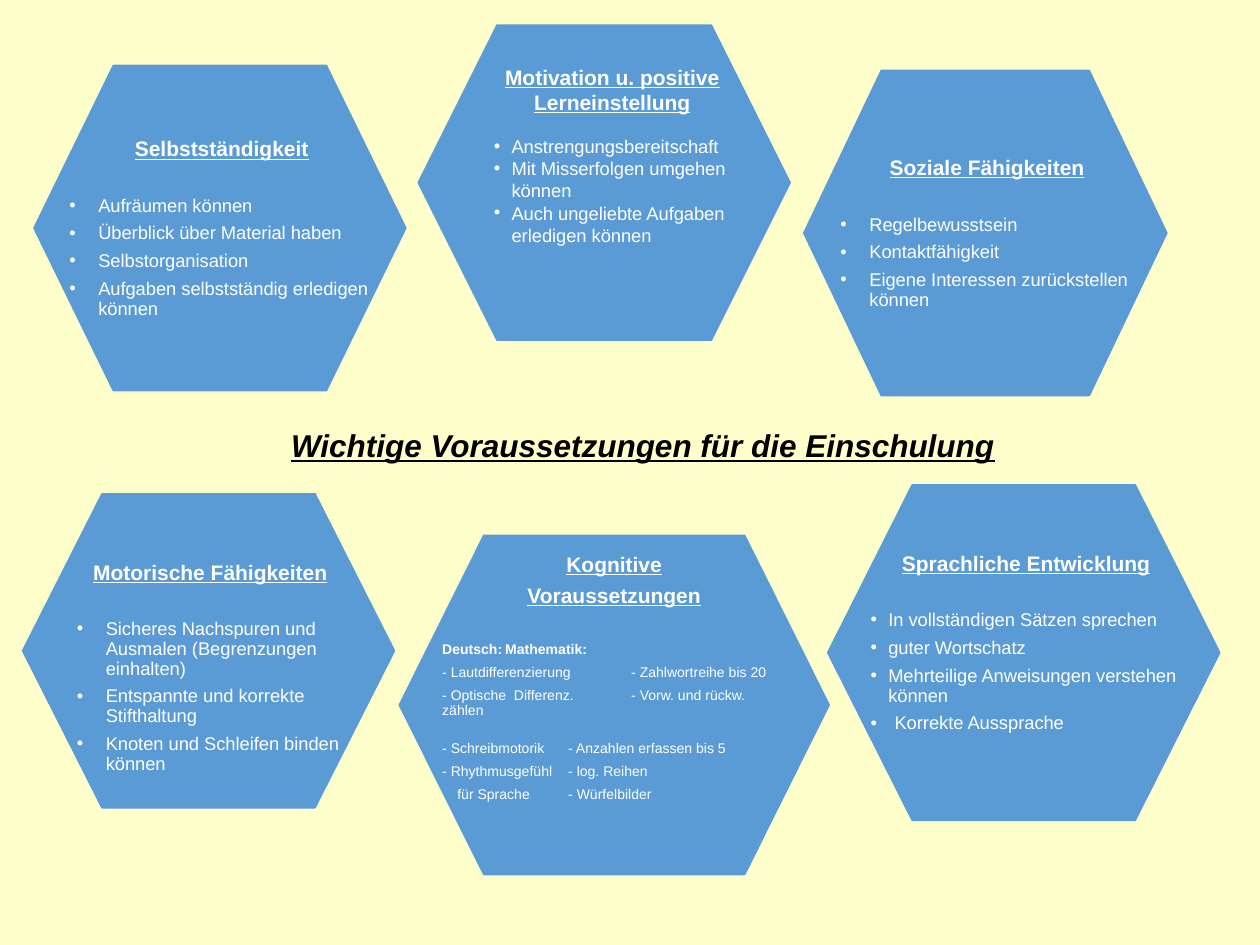
"""Builds the slide on important prerequisites for starting school."""
import pptx
import pptx.dml.color
import pptx.enum.shapes
import pptx.enum.text
import pptx.oxml
import pptx.oxml.ns
import pptx.util

CENTER = pptx.enum.text.PP_ALIGN.CENTER
LEFT = pptx.enum.text.PP_ALIGN.LEFT


def color(value):
    return pptx.dml.color.RGBColor.from_string(value)


def write(frame, text, size, align=LEFT, bold=False, underline=False, ink="FFFFFF",
          spacing=0.9, after=4.5, margin=0, indent=0, extras=("<a:buNone {}/>",)):
    paragraph = frame.paragraphs[0] if not frame.text else frame.add_paragraph()
    paragraph.text = text
    properties = paragraph._p.get_or_add_pPr()
    properties.set("marL", str(pptx.util.Inches(margin)))
    properties.set("indent", str(pptx.util.Inches(indent)))
    for extra in extras:
        properties.append(pptx.oxml.parse_xml(extra.format(pptx.oxml.ns.nsdecls("a"))))
    paragraph.alignment = align
    paragraph.line_spacing = spacing
    paragraph.space_before = pptx.util.Pt(0)
    paragraph.space_after = pptx.util.Pt(after)
    paragraph.font.name = "Arial"
    paragraph.font.size = pptx.util.Pt(size)
    paragraph.font.bold = bold
    paragraph.font.underline = underline
    paragraph.font.color.rgb = color(ink)
    return paragraph


deck = pptx.Presentation()
deck.slide_width = pptx.util.Inches(10)
deck.slide_height = pptx.util.Inches(7.5)
column = deck.slide_width / 100
row = deck.slide_height / 75

slide = deck.slides.add_slide(deck.slide_layouts[4])
slide.background.fill.solid()
slide.background.fill.fore_color.rgb = color("FFFFCC")
heading, *bodies = slide.placeholders

bullet = ('<a:buFont {} typeface="Arial"/>', '<a:buChar {} char="•"/>')
second_column = ("<a:buNone {}/>", '<a:tabLst {} ><a:tab pos="%d" algn="l"/></a:tabLst>' % (13.2 * column))

hexagons = [
    (2.7, 5.2, 29.5, 25.8, 6.3),
    (1.8, 39.2, 29.5, 24.9, 6.3),
    (63.8, 5.6, 28.8, 25.8, 6.15),
    (65.7, 38.5, 31.1, 26.6, 6.7),
    (33.2, 2, 29.5, 25, 6.25),
    (31.7, 42.5, 34.1, 26.9, 6.7),
]
texts = [
    (5.5, 11, 24.2), (6.1, 44.6, 21.2), (66.7, 12.5, 23.3),
    (69.1, 43.9, 24.7), (39.2, 5.1, 18.8), (35.1, 44, 27.3),
]
abilities = [
    (["Selbstständigkeit"], 0.23, ["Aufräumen können", "Überblick über Material haben",
     "Selbstorganisation", "Aufgaben selbstständig erledigen können"]),
    (["Motorische Fähigkeiten"], 0.23, ["Sicheres Nachspuren und Ausmalen (Begrenzungen einhalten)",
     "Entspannte und korrekte Stifthaltung", "Knoten und Schleifen binden können"]),
    (["Soziale Fähigkeiten"], 0.23, ["Regelbewusstsein", "Kontaktfähigkeit",
     "Eigene Interessen zurückstellen können"]),
    (["Sprachliche Entwicklung"], 0.14, ["In vollständigen Sätzen sprechen", "guter Wortschatz",
     "Mehrteilige Anweisungen verstehen können", "Korrekte Aussprache"]),
    (["Motivation u. positive Lerneinstellung"], 0.14, ["Anstrengungsbereitschaft",
     "Mit Misserfolgen umgehen können", "Auch ungeliebte Aufgaben erledigen können"]),
    (["Kognitive", "Voraussetzungen"], 0, []),
]
subjects = [
    ("Deutsch:", "Mathematik:"),
    ("- Lautdifferenzierung", "- Zahlwortreihe bis 20"),
    ("- Optische  Differenz.", "- Vorw. und rückw. zählen"),
    ("- Schreibmotorik", "- Anzahlen erfassen bis 5"),
    ("- Rhythmusgefühl", "- log. Reihen"),
    ("für Sprache", "- Würfelbilder"),
]

frames = []
for index, ((x, y, width, height, slant), (text_x, text_y, text_width)) in enumerate(zip(hexagons, texts)):
    hexagon = slide.shapes.add_shape(pptx.enum.shapes.MSO_SHAPE.HEXAGON, int(x * column), int(y * row),
                                     int(width * column), int(height * row))
    hexagon.adjustments[0] = slant / height
    hexagon.shadow.inherit = False
    hexagon.fill.solid()
    hexagon.fill.fore_color.rgb = color("5B9BD5")
    hexagon.line.color.rgb = color("5B9BD5")
    hexagon.line.width = pptx.util.Pt(1)
    if index < len(bodies):
        content = bodies[index]
        slide.shapes.element.append(content.element)
    else:
        content = slide.shapes.add_textbox(0, 0, 0, 0)
    content.left, content.top = int(text_x * column), int(text_y * row)
    content.width, content.height = int(text_width * column), int(18 * row)
    frames.append(content.text_frame)

heading.left, heading.top = int(23.1 * column), int(33.8 * row)
heading.width, heading.height = int(75 * column), int(3.2 * row)
for frame in [heading.text_frame] + frames:
    frame.word_wrap = True
    frame.auto_size = pptx.enum.text.MSO_AUTO_SIZE.NONE
    frame.vertical_anchor = pptx.enum.text.MSO_ANCHOR.TOP
    frame.margin_left = frame.margin_right = frame.margin_top = frame.margin_bottom = 0

for frame, (names, hang, skills) in zip(frames, abilities):
    motivation = names[0].startswith("Motivation")
    spacing, after, gap = (1, 0, 12) if motivation else (0.9, 4.5, 20)
    for name in names:
        write(frame, name, 12, CENTER, True, True, spacing=spacing,
              after=gap if name == names[-1] else after)
    for skill in skills:
        margin = 0.19 if skill == "Korrekte Aussprache" else hang
        write(frame, skill, 10.5, spacing=spacing, after=after,
              margin=margin, indent=-margin, extras=bullet)

for german, maths in subjects:
    write(frames[-1], f"{german}\t{maths}", 8, bold=german == "Deutsch:",
          after=13 if "Optische" in german else 4.5,
          indent=0.12 if german == "für Sprache" else 0, extras=second_column)

title = write(heading.text_frame, "Wichtige Voraussetzungen für die Einschulung", 18,
              bold=True, underline=True, ink="000000", spacing=1, after=0)
title.font.italic = True

deck.save("out.pptx")
